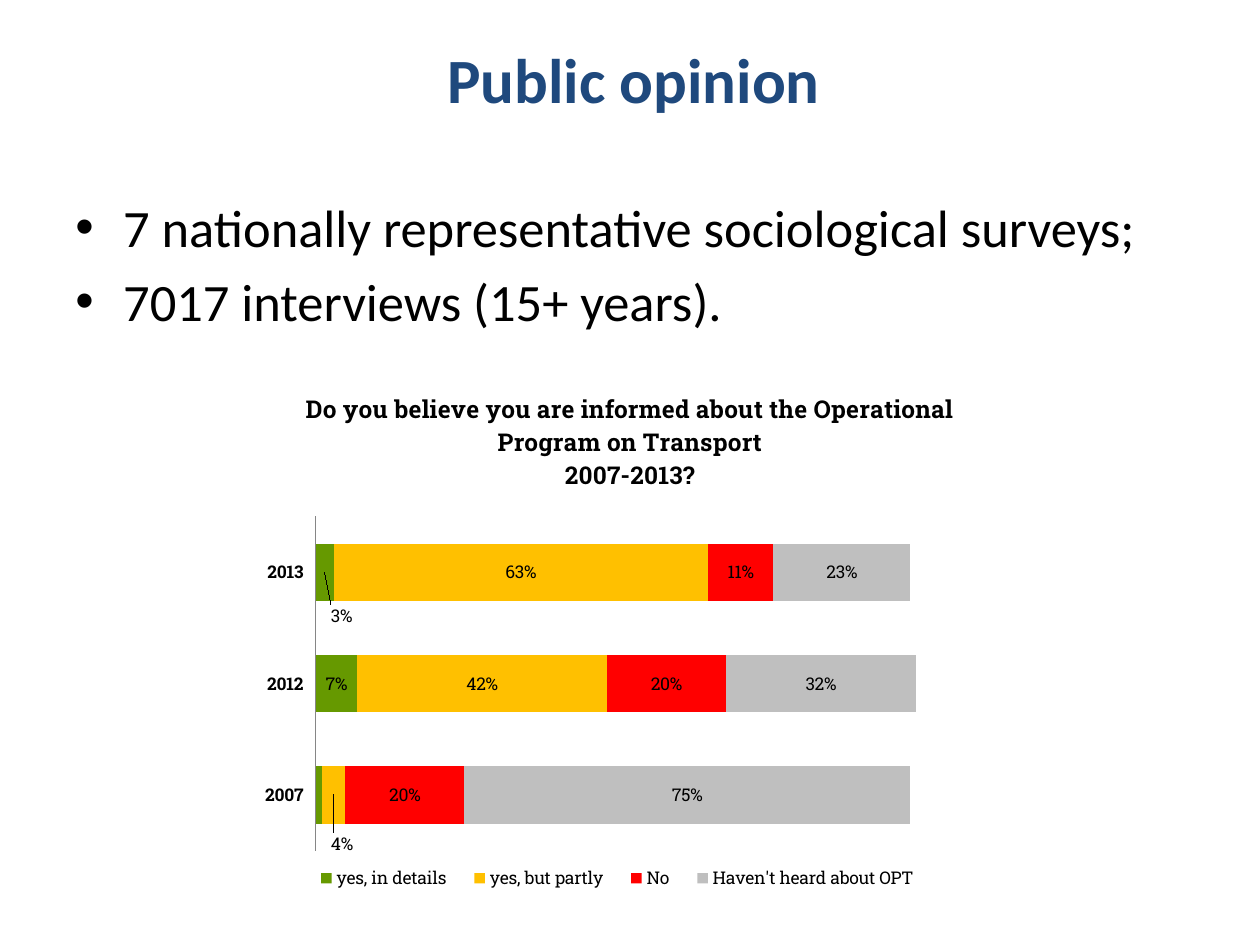
from pptx import Presentation
from pptx.chart.data import CategoryChartData
from pptx.dml.color import RGBColor
from pptx.enum.chart import XL_CHART_TYPE as ChartType, XL_LEGEND_POSITION as LegendSide
from pptx.enum.chart import XL_TICK_LABEL_POSITION as LabelSide, XL_TICK_MARK as Tick
from pptx.enum.text import MSO_ANCHOR as Anchor, PP_ALIGN as Align
from pptx.oxml import parse_xml
from pptx.oxml.ns import nsdecls, qn
from pptx.util import Inches, Pt

COLORS = {"title": "1F497D", "text": "000000", "axis": "868686", "green": "669900",
          "amber": "FFC000", "red": "FF0000", "grey": "BFBFBF"}
SERIES = [("yes, in details", "green", (0.03, 0.07, 0.01)),
          ("yes, but partly", "amber", (0.63, 0.42, 0.04)),
          ("No", "red", (0.11, 0.2, 0.2)),
          ("Haven't heard about OPT", "grey", (0.23, 0.32, 0.75))]


def layout_xml(target=None, **places):
    """Return a manual chart layout; edge mode is used when a width is given."""
    edges = {"xMode": "edge", "yMode": "edge"} if "w" in places else {}
    parts = ({"layoutTarget": target} if target else {}) | edges | places
    inner = "".join(f'<c:{name} val="{value}"/>' for name, value in parts.items())
    return parse_xml(f'<c:layout {nsdecls("c")}><c:manualLayout>{inner}</c:manualLayout></c:layout>')


def set_layout(parent, before, layout):
    """Replace the layout of a chart part, placing it ahead of a given child."""
    for old in parent.findall(qn("c:layout")):
        parent.remove(old)
    parent.find(qn(before)).addprevious(layout)


class SlideBuilder:
    """Hold the style and current slide, placing elements on a 100 by 60 grid."""

    def __init__(self, deck):
        self.deck = deck
        self.page = deck.slides.add_slide(deck.slide_layouts[6])
        self.column, self.row = deck.slide_width / 100, deck.slide_height / 60
        self.text_font, self.chart_font = "Calibri", "Roboto Slab"

    def area(self, left, top, width, height):
        return (round(left * self.column), round(top * self.row),
                round(width * self.column), round(height * self.row))

    def style(self, font, name, size, color="text", bold=False):
        font.name, font.size, font.bold = name, Pt(size), bold
        font.color.rgb = RGBColor.from_string(COLORS[color])

    def text(self, place, lines, size, color="text", bold=False, bullet=False):
        box = self.page.shapes.add_textbox(*self.area(*place))
        frame = box.text_frame
        frame.word_wrap = True
        frame.vertical_anchor = Anchor.TOP if bullet else Anchor.MIDDLE
        for index, line in enumerate(lines):
            para = frame.paragraphs[0] if index == 0 else frame.add_paragraph()
            para.alignment = Align.LEFT if bullet else Align.CENTER
            if index:
                para.space_before = Pt(size * 0.2)
            if bullet:
                props = para._p.get_or_add_pPr()
                props.set("marL", str(Inches(0.38)))
                props.set("indent", str(-Inches(0.38)))
                props.append(parse_xml(f'<a:buFont {nsdecls("a")} typeface="Arial"/>'))
                props.append(parse_xml(f'<a:buChar {nsdecls("a")} char="•"/>'))
            span = para.add_run()
            span.text = line
            self.style(span.font, self.text_font, size, color, bold)

    def point_label(self, series, index, shift=None):
        label = parse_xml(f'<c:dLbl {nsdecls("c")}><c:idx val="{index}"/></c:dLbl>')
        if shift:
            label.append(layout_xml(x=shift[0], y=shift[1]))
            flags = {"LegendKey": 0, "Val": 1, "CatName": 0, "SerName": 0, "Percent": 0, "BubbleSize": 0}
            settings = {f"show{name}": value for name, value in flags.items()}
        else:
            settings = {"delete": 1}
        for name, value in settings.items():
            label.append(parse_xml(f'<c:{name} {nsdecls("c")} val="{value}"/>'))
        labels = series.data_labels._element
        labels.insert(len(labels.findall(qn("c:dLbl"))), label)

    def chart_title(self, chart, lines):
        frame = chart.chart_title.text_frame
        for index, line in enumerate(lines):
            para = frame.paragraphs[0] if index == 0 else frame.add_paragraph()
            span = para.add_run()
            span.text = line
            self.style(span.font, self.chart_font, 14, bold=True)
        chart.chart_title.include_in_layout = False

    def stacked_bars(self, place, title, categories, rows):
        data = CategoryChartData(number_format="0%")
        data.categories = categories
        for name, _, values in rows:
            data.add_series(name, values)
        chart = self.page.shapes.add_chart(ChartType.BAR_STACKED, *self.area(*place), data).chart
        self.style(chart.font, self.chart_font, 10)
        self.chart_title(chart, title)
        plot = chart.plots[0]
        plot.gap_width, plot.overlap, plot.vary_by_categories = 95, 100, False
        for series, (_, color, _) in zip(plot.series, rows):
            series.format.fill.solid()
            series.format.fill.fore_color.rgb = RGBColor.from_string(COLORS[color])
            series.data_labels.show_value = True
            self.style(series.data_labels.font, self.chart_font, 10)
        axis = chart.category_axis
        axis.reverse_order = True
        axis.major_tick_mark = axis.minor_tick_mark = Tick.NONE
        axis.tick_label_position = LabelSide.LOW
        axis.format.line.color.rgb = RGBColor.from_string(COLORS["axis"])
        self.style(axis.tick_labels.font, self.chart_font, 10, bold=True)
        scale = chart.value_axis
        scale.minimum_scale, scale.maximum_scale = 0, 1.2
        scale.has_major_gridlines = scale.visible = False
        chart.has_legend = True
        chart.legend.position = LegendSide.TOP
        chart.legend.include_in_layout = False
        self.style(chart.legend.font, self.chart_font, 10)
        set_layout(chart.legend._element, "c:overlay", layout_xml(x=0.11, y=0.9, w=0.75, h=0.06))
        plot_area = plot._element.getparent()
        set_layout(plot_area, "c:barChart", layout_xml("inner", x=0.13, y=0.27, w=0.84, h=0.61))
        return plot.series


def main():
    deck = Presentation()
    deck.slide_width, deck.slide_height = Inches(10), Inches(7.5)
    builder = SlideBuilder(deck)
    builder.text((5.3, 0, 90, 10), ["Public opinion"], 36, "title", bold=True)
    builder.text((5, 12, 90, 39.6), ["7 nationally representative sociological surveys;",
                                     "7017 interviews (15+ years)."], 30, bullet=True)
    question = ["Do you believe you are informed about the Operational Program on Transport", "2007-2013?"]
    details, partly, *_ = builder.stacked_bars((16.3, 23.4, 67.4, 34.8), question,
                                               ["2013", "2012", "2007"], SERIES)
    builder.point_label(details, 0, (0.02, 0.08))
    builder.point_label(details, 2)
    builder.point_label(partly, 2, (0.01, 0.09))
    deck.save("out.pptx")


if __name__ == "__main__":
    main()
